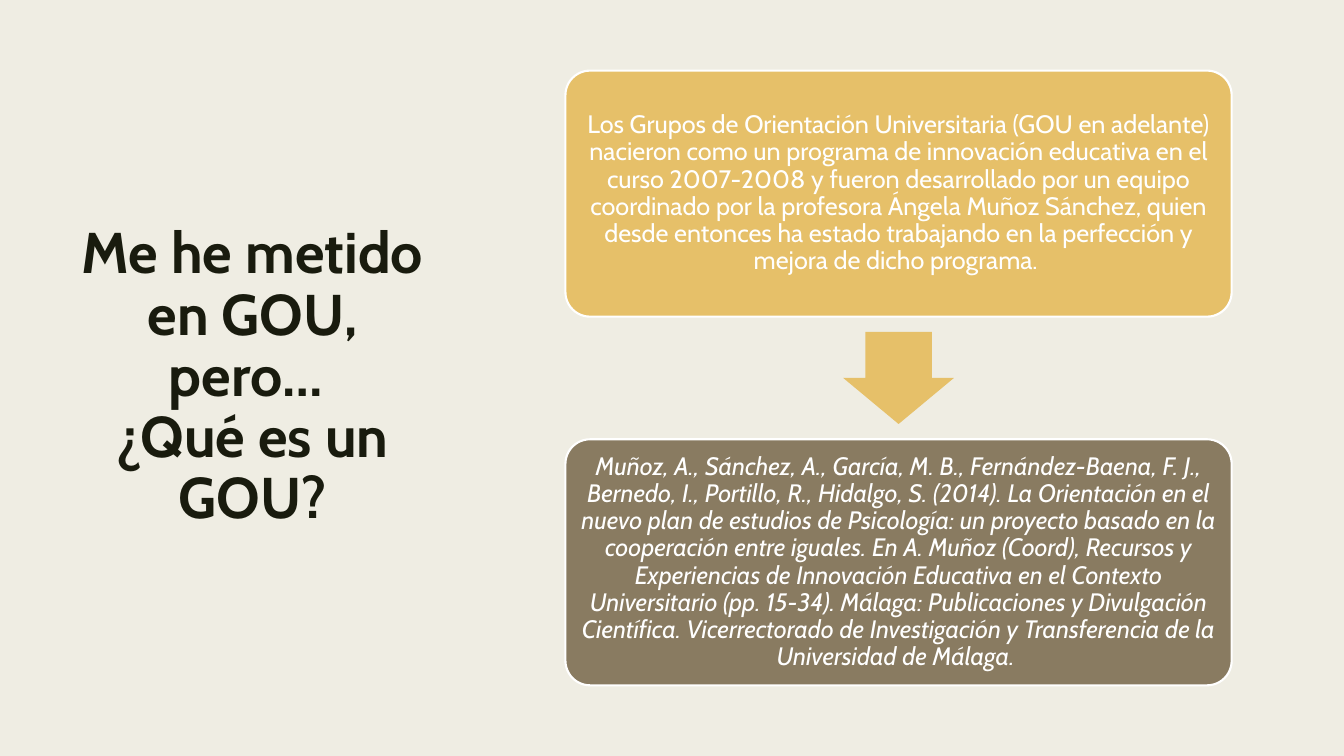
from pptx import Presentation
from pptx.dml.color import RGBColor
from pptx.enum import shapes, text
from pptx.util import Cm, Pt

# Content
TITLE = "Me he metido en GOU, pero… \v¿Qué es un GOU?"
PANELS = [
    dict(fill="gold", italic=False, text=(
        "Los Grupos de Orientación Universitaria (GOU en adelante) nacieron como un "
        "programa de innovación educativa en el curso 2007-2008 y fueron desarrollado "
        "por un equipo coordinado por la profesora Ángela Muñoz Sánchez, quien desde "
        "entonces ha estado trabajando en la perfección y mejora de dicho programa. ")),
    dict(fill="brown", italic=True, text=(
        "Muñoz, A., Sánchez, A., García, M. B., Fernández-Baena, F. J., Bernedo, I., "
        "Portillo, R., Hidalgo, S. (2014). La Orientación en el nuevo plan de estudios "
        "de Psicología: un proyecto basado en la cooperación entre iguales. En A. Muñoz "
        "(Coord), Recursos y Experiencias de Innovación Educativa en el Contexto "
        "Universitario (pp. 15-34). Málaga: Publicaciones y Divulgación Científica. "
        "Vicerrectorado de Investigación y Transferencia de la Universidad de Málaga. ")),
]
COLORS = {"paper": "EFEDE3", "ink": "191B0E", "gold": "E6C069",
          "brown": "897B61", "white": "FFFFFF"}

# Layout, in centimetres
TOP, HEIGHT = 1.78, 15.49
TITLE_LEFT, TITLE_W = 1.78, 9.17
PANEL_LEFT, PANEL_W, PANEL_H = 14.25, 16.79, 6.2
PANEL_STEP = HEIGHT - PANEL_H
ARROW_LEN, ARROW_W = 2.32, 2.79
INSET = 0.18


def rgb(name):
    return RGBColor.from_string(COLORS[name])


def write(tf, content, spacing, color, **font):
    tf.word_wrap = True
    tf.auto_size = text.MSO_AUTO_SIZE.NONE
    tf.vertical_anchor = text.MSO_ANCHOR.MIDDLE
    p = tf.paragraphs[0]
    p.text = content
    p.alignment = text.PP_ALIGN.CENTER
    p.line_spacing = spacing
    for r in p.runs:
        r.font.color.rgb = rgb(color)
        for key, value in {"name": "Cabin", **font}.items():
            setattr(r.font, key, value)


def add_block(s, kind, box, fill, adjustments):
    sp = s.shapes.add_shape(kind, *map(Cm, box))
    sp.shadow.inherit = False
    sp.fill.solid()
    sp.fill.fore_color.rgb = rgb(fill)
    sp.line.fill.background()
    for i, value in enumerate(adjustments):
        sp.adjustments[i] = value
    return sp


def main():
    prs = Presentation()
    prs.slide_width, prs.slide_height = Cm(33.87), Cm(19.05)
    s = prs.slides.add_slide(prs.slide_layouts[5])
    s.background.fill.solid()
    s.background.fill.fore_color.rgb = rgb("paper")

    # Title
    title = s.shapes.title
    title.left, title.top = Cm(TITLE_LEFT), Cm(TOP)
    title.width, title.height = Cm(TITLE_W), Cm(HEIGHT)
    write(title.text_frame, TITLE, 0.89, "ink", size=Pt(41), bold=True)

    # Panels
    for i, panel in enumerate(PANELS):
        box = PANEL_LEFT, TOP + i * PANEL_STEP, PANEL_W, PANEL_H
        sp = add_block(s, shapes.MSO_SHAPE.ROUNDED_RECTANGLE, box, panel["fill"], [0.1])
        sp.line.color.rgb = rgb("white")
        sp.line.width = Pt(1.5)
        tf = sp.text_frame
        for side in ("left", "top", "right", "bottom"):
            setattr(tf, f"margin_{side}", Cm(INSET))
        write(tf, panel["text"], 0.9, "white", size=Pt(18), italic=panel["italic"])

    # Arrow centred between the panels, turned to point down
    box = (PANEL_LEFT + (PANEL_W - ARROW_LEN) / 2, TOP + (HEIGHT - ARROW_W) / 2,
           ARROW_LEN, ARROW_W)
    arrow = add_block(s, shapes.MSO_SHAPE.RIGHT_ARROW, box, "gold", [0.6, 0.5])
    arrow.rotation = 90

    prs.save("out.pptx")


if __name__ == "__main__":
    main()
